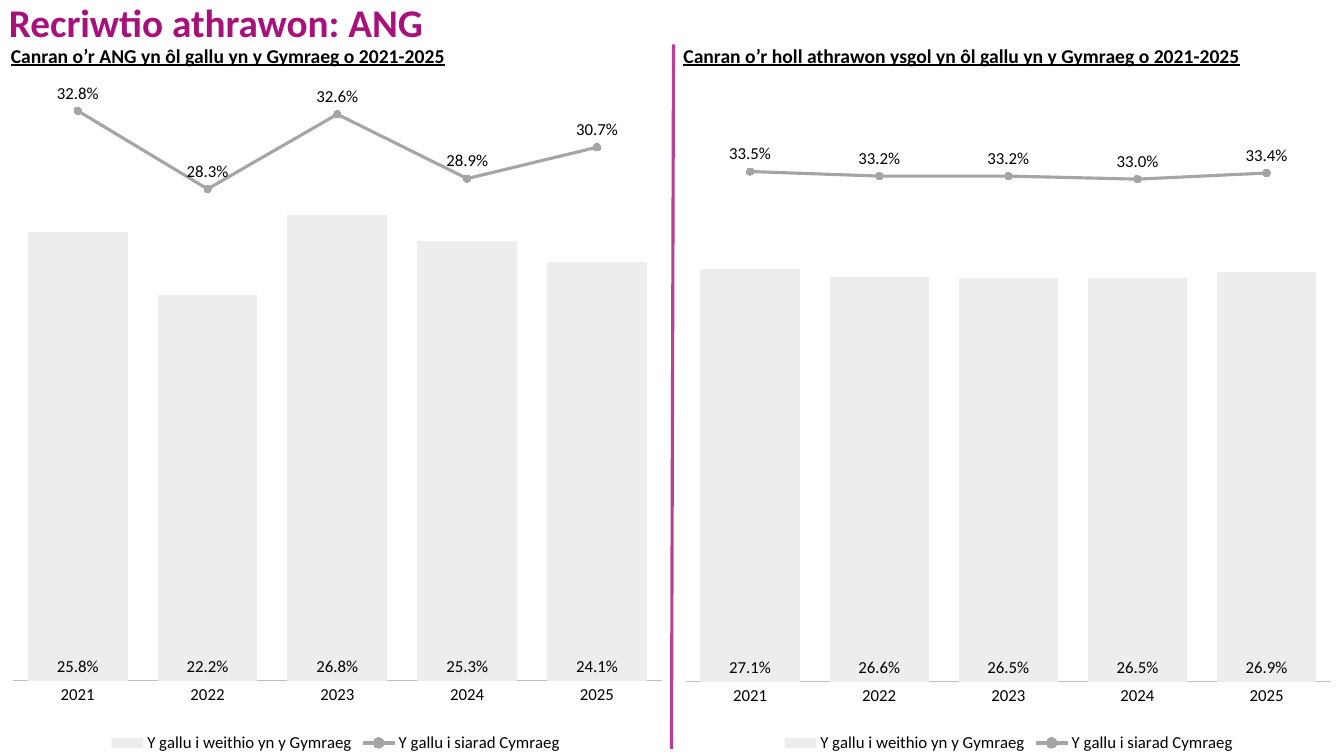
from lxml import etree
from pptx import Presentation
from pptx.chart.data import CategoryChartData
from pptx.dml.color import RGBColor
from pptx.enum import chart as charts, shapes, text
from pptx.oxml import parse_xml
from pptx.oxml.ns import nsdecls, qn
from pptx.util import Inches, Pt

MAGENTA, BLACK, GREY, PALE, AXIS = "A8117C", "000000", "A5A5A5", "EDEDED", "BFBFBF"
YEARS = ["2021", "2022", "2023", "2024", "2025"]
PERCENT = "0.0%"


def color(value):
    return RGBColor.from_string(value)


def set_font(font, size, value, **styles):
    font.color.rgb = color(value)
    formats = {"name": "Calibri", "size": Pt(size), **styles}
    for name, setting in formats.items():
        setattr(font, name, setting)


presentation = Presentation()
presentation.slide_width = Inches(13.33)
presentation.slide_height = Inches(7.5)
slide = presentation.slides.add_slide(presentation.slide_layouts[6])

# Title and chart headings
headings = [
    ("Recriwtio athrawon: ANG", (-0.01, 0, 5.05, 0.49), 28, MAGENTA, False),
    ("Canran o’r ANG yn ôl gallu yn y Gymraeg o 2021-2025",
     (0.01, 0.38, 6.64, 0.34), 14, BLACK, True),
    ("Canran o’r holl athrawon ysgol yn ôl gallu yn y Gymraeg o 2021-2025",
     (6.68, 0.38, 6.5, 0.34), 14, BLACK, True),
]
for words, box, size, ink, underline in headings:
    frame = slide.shapes.add_textbox(*map(Inches, box)).text_frame
    frame.word_wrap = True
    frame.vertical_anchor = text.MSO_ANCHOR.MIDDLE
    paragraph = frame.paragraphs[0]
    paragraph.line_spacing = 0.9 if size == 28 else 1.0
    run = paragraph.add_run()
    run.text = words
    set_font(run.font, size, ink, bold=True, underline=underline)

# Charts: columns for working in Welsh, a line for speaking Welsh
panels = [
    ((-0.02, 0.72, 6.7, 6.79), 0.35, (0.022, 0, 0.961, 0.889),
     (0.258, 0.222, 0.268, 0.253, 0.241), (0.328, 0.283, 0.326, 0.289, 0.307)),
    ((6.68, 0.72, 6.65, 6.79), 0.4, (0.018, 0, 0.963, 0.89),
     (0.271, 0.266, 0.265, 0.265, 0.269), (0.335, 0.332, 0.332, 0.33, 0.334)),
]
for box, maximum, plot_box, working, speaking in panels:
    data = CategoryChartData(number_format=PERCENT)
    data.categories = YEARS
    data.add_series("Y gallu i weithio yn y Gymraeg", working)
    data.add_series("Y gallu i siarad Cymraeg", speaking)
    chart = slide.shapes.add_chart(
        charts.XL_CHART_TYPE.COLUMN_CLUSTERED, *map(Inches, box), data).chart
    chart.has_title = False
    set_font(chart.font, 12, BLACK)

    # Legend and axes
    chart.has_legend = True
    chart.legend.position = charts.XL_LEGEND_POSITION.BOTTOM
    chart.legend.include_in_layout = False
    set_font(chart.legend.font, 12, BLACK)
    category_axis, value_axis = chart.category_axis, chart.value_axis
    category_axis.major_tick_mark = charts.XL_TICK_MARK.NONE
    category_axis.format.line.color.rgb = color(AXIS)
    category_axis.format.line.width = Pt(0.75)
    set_font(category_axis.tick_labels.font, 12, BLACK)
    value_axis.minimum_scale, value_axis.maximum_scale = 0, maximum
    value_axis.has_major_gridlines = False
    value_axis.tick_labels.number_format = PERCENT
    value_axis.tick_labels.number_format_is_linked = False
    value_axis.visible = False

    # Move the second series to a line plot on the same axes
    plot_area = category_axis.format.line and chart.element.find(".//" + qn("c:plotArea"))
    bars = plot_area.find(qn("c:barChart"))
    line_series = bars.findall(qn("c:ser"))[1]
    for invert in line_series.findall(qn("c:invertIfNegative")):
        line_series.remove(invert)
    line_chart = parse_xml(
        f'<c:lineChart {nsdecls("c")}><c:grouping val="standard"/>'
        '<c:varyColors val="0"/><c:marker val="1"/></c:lineChart>')
    line_chart.insert(2, line_series)
    for axis_id in bars.findall(qn("c:axId")):
        etree.SubElement(line_chart, qn("c:axId")).set("val", axis_id.get("val"))
    bars.addnext(line_chart)

    # Fixed inner plot area
    for layout in plot_area.findall(qn("c:layout")):
        plot_area.remove(layout)
    sizes = "".join(f'<c:{tag} val="{value}"/>' for tag, value in zip("xywh", plot_box))
    plot_area.insert(0, parse_xml(
        f'<c:layout {nsdecls("c")}><c:manualLayout><c:layoutTarget val="inner"/>'
        f'<c:xMode val="edge"/><c:yMode val="edge"/>{sizes}'
        '</c:manualLayout></c:layout>'))

    # Series colours and labels
    column_plot, line_plot = chart.plots
    column_plot.gap_width = 30
    column_plot.vary_by_categories = False
    columns, line = column_plot.series[0], line_plot.series[0]
    columns.format.fill.solid()
    columns.format.fill.fore_color.rgb = color(PALE)
    line.smooth = False
    line.format.line.color.rgb = color(GREY)
    line.format.line.width = Pt(2.25)
    line.marker.style = charts.XL_MARKER_STYLE.CIRCLE
    line.marker.size = 5
    line.marker.format.fill.solid()
    line.marker.format.fill.fore_color.rgb = color(GREY)
    line.marker.format.line.color.rgb = color(GREY)
    positions = charts.XL_LABEL_POSITION
    for series, position in ((columns, positions.INSIDE_BASE), (line, positions.ABOVE)):
        labels = series.data_labels
        set_font(labels.font, 12, BLACK)
        formats = {"show_value": True, "position": position,
                   "number_format": PERCENT, "number_format_is_linked": False}
        for name, setting in formats.items():
            setattr(labels, name, setting)

# Divider between the charts
divider = slide.shapes.add_connector(
    shapes.MSO_CONNECTOR.STRAIGHT, *map(Inches, (6.68, 0.44, 6.66, 7.43)))
divider.line.color.rgb = color(MAGENTA)
divider.line.width = Pt(2.25)
properties = divider.element.spPr
ink = properties.find(".//" + qn("a:srgbClr"))
etree.SubElement(ink, qn("a:alpha")).set("val", "80000")
etree.SubElement(properties, qn("a:effectLst"))

presentation.save("out.pptx")
